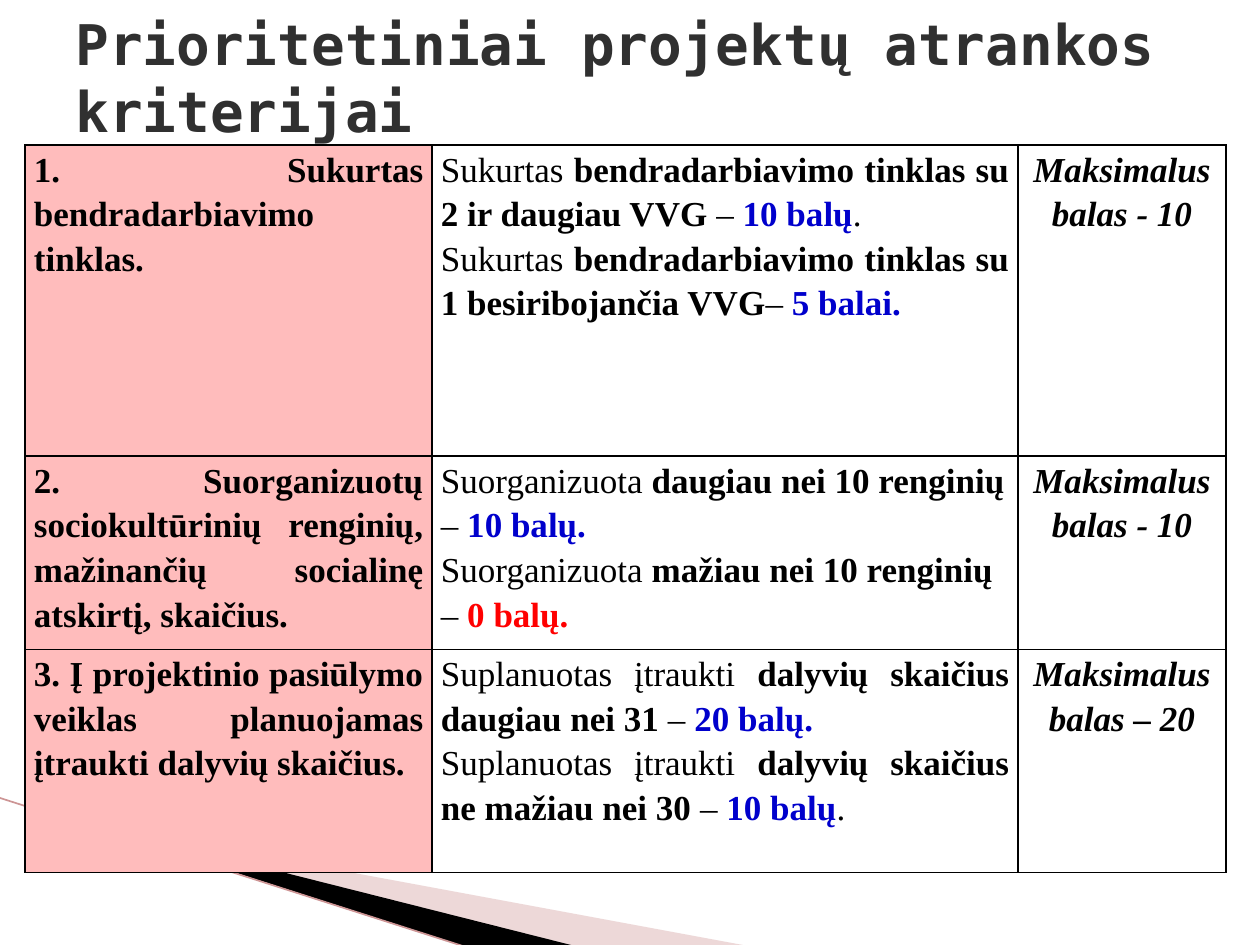
import pptx
import pptx.util
import pptx.dml.color
import pptx.enum.shapes
import pptx.enum.text
import pptx.oxml
import pptx.oxml.ns
from lxml import etree

Inches = pptx.util.Inches
Pt = pptx.util.Pt
Align = pptx.enum.text.PP_ALIGN

BLACK, BLUE, RED, PINK = "000000", "0000CC", "FF0000", "FFBCBC"
TITLE = "Prioritetiniai projektų atrankos kriterijai"
WEDGES = [
    ([(0.55, 6.51), (5.95, 7.51), (4.56, 7.51), (0.55, 6.5)], "D29E9E", 40),
    ([(0.53, 6.49), (4.57, 7.51), (3.72, 7.52), (0.54, 6.5)], BLACK, 100),
]
COLUMNS = [3.23, 4.65, 1.65]
ROWS = [2.47, 1.42, 1.77]
PLAIN, BOLD = (False, BLACK), (True, BLACK)
GOOD, BAD = (True, BLUE), (True, RED)
CRITERIA = [
    (
        "1. Sukurtas bendradarbiavimo tinklas.",
        Align.JUSTIFY,
        [
            [("Sukurtas ", PLAIN), ("bendradarbiavimo tinklas su 2 ir daugiau VVG ", BOLD),
             ("– ", PLAIN), ("10 balų", GOOD), (".", PLAIN)],
            [("Sukurtas ", PLAIN), ("bendradarbiavimo tinklas su 1 besiribojančia VVG", BOLD),
             ("– ", PLAIN), ("5 balai.", GOOD)],
        ],
        "Maksimalus balas - 10",
    ),
    (
        "2. Suorganizuotų sociokultūrinių renginių, mažinančių socialinę atskirtį, skaičius.",
        Align.LEFT,
        [
            [("Suorganizuota ", PLAIN), ("daugiau nei 10 renginių ", BOLD),
             ("– ", PLAIN), ("10 balų.", GOOD)],
            [("Suorganizuota ", PLAIN), ("mažiau nei 10 renginių ", BOLD),
             ("– ", PLAIN), ("0 balų.", BAD)],
        ],
        "Maksimalus balas - 10",
    ),
    (
        "3. Į projektinio pasiūlymo veiklas planuojamas įtraukti dalyvių skaičius.",
        Align.JUSTIFY,
        [
            [("Suplanuotas įtraukti ", PLAIN), ("dalyvių skaičius daugiau nei 31 ", BOLD),
             ("– ", PLAIN), ("20 balų.", GOOD)],
            [("Suplanuotas įtraukti ", PLAIN), ("dalyvių skaičius ne mažiau nei 30", BOLD),
             (" – ", PLAIN), ("10 balų", GOOD), (".", PLAIN)],
        ],
        "Maksimalus balas – 20",
    ),
]


def color(value):
    return pptx.dml.color.RGBColor.from_string(value)


def add_wedge(page, points, fill, opacity):
    corners = [(Inches(x), Inches(y)) for x, y in points]
    builder = page.shapes.build_freeform(*corners[0])
    builder.add_line_segments(corners[1:], close=True)
    wedge = builder.convert_to_shape()
    wedge.shadow.inherit = False
    wedge.line.fill.background()
    wedge.fill.solid()
    wedge.fill.fore_color.rgb = color(fill)
    if opacity < 100:
        tone = wedge.fill._xPr.find(".//" + pptx.oxml.ns.qn("a:srgbClr"))
        etree.SubElement(tone, pptx.oxml.ns.qn("a:alpha"), val=str(opacity * 1000))


def add_edge(page):
    edge = page.shapes.add_connector(
        pptx.enum.shapes.MSO_CONNECTOR.STRAIGHT,
        Inches(-0.01), Inches(6.33), Inches(3.71), Inches(7.52))
    edge.line.color.rgb = color("CD9595")
    edge.line.width = Pt(0.95)
    etree.SubElement(edge._element.spPr, pptx.oxml.ns.qn("a:effectLst"))


def add_title(page):
    box = page.shapes.add_textbox(Inches(0.5), Inches(0.3), Inches(9), Inches(0.61))
    frame = box.text_frame
    frame.word_wrap = True
    frame.vertical_anchor = pptx.enum.text.MSO_ANCHOR.MIDDLE
    para = frame.paragraphs[0]
    para.text = TITLE
    para.font.name = "DejaVu Sans Mono"
    para.font.size = Pt(32)
    para.font.bold = True
    para.font.color.rgb = color("303030")


def add_borders(cell):
    properties = cell._tc.get_or_add_tcPr()
    for side in ("lnL", "lnR", "lnT", "lnB"):
        border = etree.SubElement(properties, pptx.oxml.ns.qn("a:" + side), w=str(Pt(1)))
        fill = etree.SubElement(border, pptx.oxml.ns.qn("a:solidFill"))
        etree.SubElement(fill, pptx.oxml.ns.qn("a:srgbClr"), val=BLACK)


def fill_cell(cell, paragraphs, align, italic=False, fill=None):
    cell.margin_left = cell.margin_right = Inches(0.07)
    cell.margin_top = cell.margin_bottom = 0
    add_borders(cell)
    if fill:
        cell.fill.solid()
        cell.fill.fore_color.rgb = color(fill)
    else:
        cell.fill.background()
    frame = cell.text_frame
    for index, spans in enumerate(paragraphs):
        para = frame.add_paragraph() if index else frame.paragraphs[0]
        para.alignment = align
        para.line_spacing = 1.15
        para.font.name = "Times New Roman"
        para.font.size = Pt(20)
        para.font.italic = italic
        for text, (bold, tone) in spans:
            span = para.add_run()
            span.text = text
            span.font.bold = bold
            span.font.color.rgb = color(tone)


def add_criteria(page):
    table = page.shapes.add_table(
        len(ROWS), len(COLUMNS), Inches(0.2), Inches(1.15),
        Inches(sum(COLUMNS)), Inches(sum(ROWS))).table
    table.first_row = table.horz_banding = False
    for column, width in zip(table.columns, COLUMNS):
        column.width = Inches(width)
    for index, (height, criterion) in enumerate(zip(ROWS, CRITERIA)):
        name, align, scores, maximum = criterion
        table.rows[index].height = Inches(height)
        fill_cell(table.cell(index, 0), [[(name, BOLD)]], Align.JUSTIFY, fill=PINK)
        fill_cell(table.cell(index, 1), scores, align)
        fill_cell(table.cell(index, 2), [[(maximum, BOLD)]], Align.CENTER, italic=True)


def main():
    deck = pptx.Presentation()
    deck.slide_width, deck.slide_height = Inches(10), Inches(7.5)
    page = deck.slides.add_slide(deck.slide_layouts[6])
    for wedge in WEDGES:
        add_wedge(page, *wedge)
    add_edge(page)
    add_title(page)
    add_criteria(page)
    deck.save("out.pptx")


if __name__ == "__main__":
    main()
